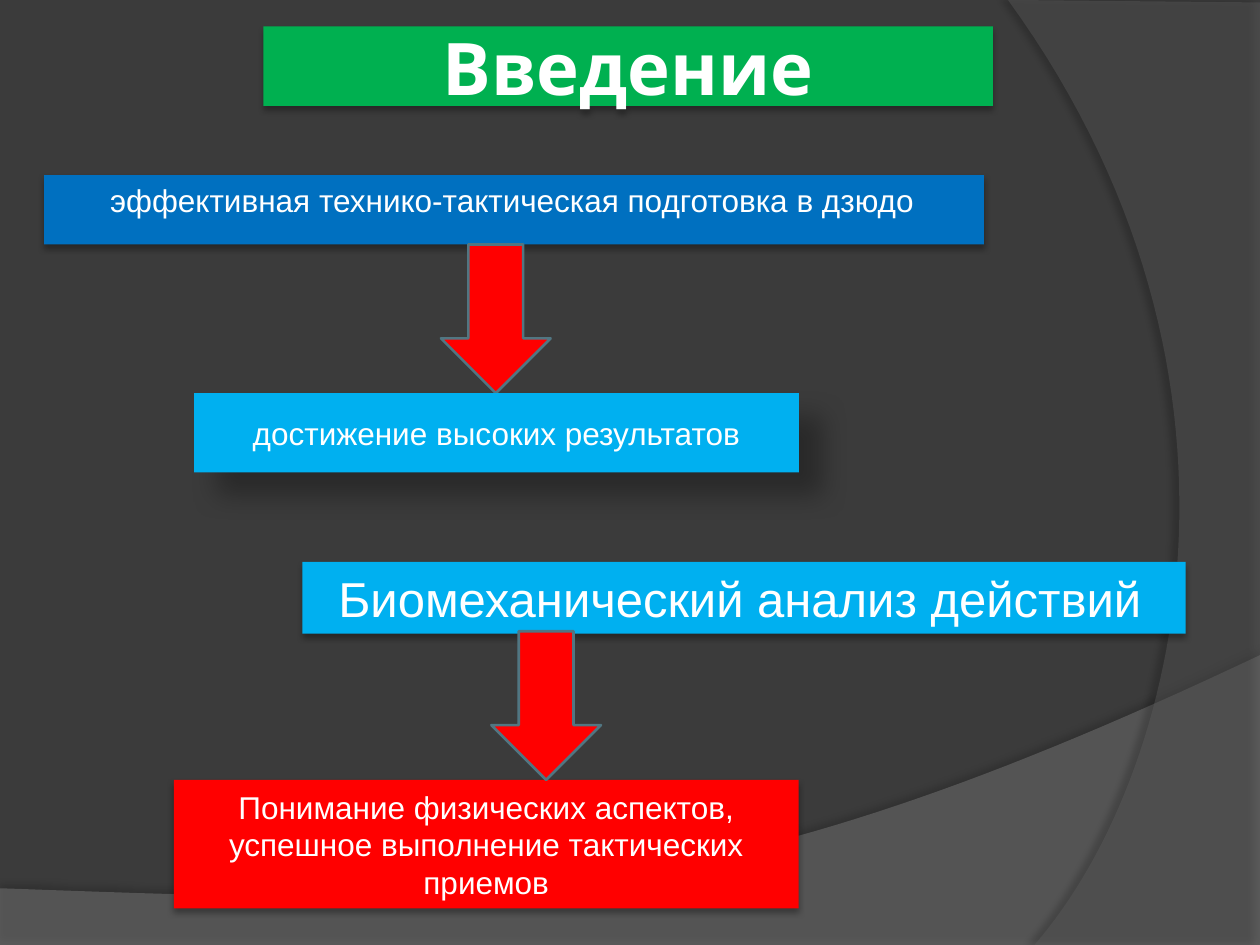
import dataclasses

import lxml.etree
import pptx
import pptx.dml.color
import pptx.enum.shapes
import pptx.enum.text
import pptx.oxml.ns
import pptx.util

Inches = pptx.util.Inches
Pt = pptx.util.Pt
qn = pptx.oxml.ns.qn
SHAPE = pptx.enum.shapes.MSO_SHAPE
ANCHOR = pptx.enum.text.MSO_ANCHOR


@dataclasses.dataclass(frozen=True)
class Theme:
    background: str = "3B3B3B"
    hill: str = "7F7F7F"
    arc: str = "5E5E5E"
    title: str = "00B050"
    cause: str = "0070C0"
    step: str = "00B0F0"
    accent: str = "FF0000"
    outline: str = "517682"
    text: str = "FFFFFF"
    shadow: str = "000000"
    title_font: str = "Karla"
    body_font: str = "Arial"
    title_size: float = 41.4
    large_size: float = 28
    body_size: float = 18


@dataclasses.dataclass(frozen=True)
class Box:
    left: float
    top: float
    width: float
    height: float

    def inner(self, left, top, width, height):
        """Return a box placed relative to this one."""
        return Box(self.left + left, self.top + top, width, height)

    def emu(self):
        return [Inches(v) for v in dataclasses.astuple(self)]


THEME = Theme()
# Shadows: opacity %, blur pt, distance pt, direction in degrees
SOFT = (32, 3.5, 2.2, 90)
DEEP = (30, 15, 18, 45)


def rgb(color):
    return pptx.dml.color.RGBColor.from_string(color)


def set_alpha(color_element, percent):
    alpha = lxml.etree.SubElement(color_element, qn("a:alpha"))
    alpha.set("val", str(percent * 1000))


def style(sp, fill, shadow=None, line=None, opacity=None):
    sp.fill.solid()
    sp.fill.fore_color.rgb = rgb(fill)
    if opacity:
        set_alpha(sp._element.spPr.find(qn("a:solidFill"))[0], opacity)
    if line:
        sp.line.color.rgb = rgb(line)
        sp.line.width = Pt(1.5)
    else:
        sp.line.fill.background()
    sp.shadow.inherit = False
    if shadow:
        alpha, blur, distance, direction = shadow
        effects = sp._element.spPr.find(qn("a:effectLst"))
        outer = lxml.etree.SubElement(effects, qn("a:outerShdw"))
        outer.set("blurRad", str(Pt(blur)))
        outer.set("dist", str(Pt(distance)))
        outer.set("dir", str(direction * 60000))
        outer.set("rotWithShape", "0")
        color = lxml.etree.SubElement(outer, qn("a:srgbClr"))
        color.set("val", THEME.shadow)
        set_alpha(color, alpha)


def write(sp, text, size=THEME.body_size, font=THEME.body_font, bold=False,
          anchor=ANCHOR.MIDDLE, hanging=False):
    tf = sp.text_frame
    tf.word_wrap = True
    tf.auto_size = pptx.enum.text.MSO_AUTO_SIZE.NONE
    tf.vertical_anchor = anchor
    p = tf.paragraphs[0]
    p.alignment = pptx.enum.text.PP_ALIGN.CENTER
    if hanging:
        p.space_before = Pt(size * 0.2)
        pPr = p._p.get_or_add_pPr()
        pPr.set("marL", str(Inches(0.46)))
        pPr.set("indent", str(Inches(-0.42)))
        lxml.etree.SubElement(pPr, qn("a:buNone"))
    r = p.add_run()
    r.text = text
    r.font.size = Pt(size)
    r.font.name = font
    r.font.bold = bold
    r.font.color.rgb = rgb(THEME.text)


def place(sp, box):
    """Move a placeholder into its box and in front of what is drawn."""
    sp.left, sp.top, sp.width, sp.height = box.emu()
    sp._element.getparent().append(sp._element)


def panel(slide, box, fill, text, shadow=SOFT, **fmt):
    sp = slide.shapes.add_shape(SHAPE.RECTANGLE, *box.emu())
    style(sp, fill, shadow)
    write(sp, text, **fmt)


def arrow(slide, box):
    sp = slide.shapes.add_shape(SHAPE.DOWN_ARROW, *box.emu())
    style(sp, THEME.accent, line=THEME.outline)


def bezier(p0, p1, p2, p3, steps=60):
    """Points along a cubic curve, both ends included."""
    def at(t, a, b, c, d):
        u = 1 - t
        return u**3 * a + 3 * u * u * t * b + 3 * u * t * t * c + t**3 * d
    return [tuple(at(i / steps, *axis) for axis in zip(p0, p1, p2, p3))
            for i in range(steps + 1)]


def outline(slide, box, points, **look):
    pts = [(Inches(box.left + x), Inches(box.top + y)) for x, y in points]
    builder = slide.shapes.build_freeform(*pts[0])
    builder.add_line_segments(pts[1:], close=True)
    style(builder.convert_to_shape(), **look)


def backdrop(slide, box):
    slide.background.fill.solid()
    slide.background.fill.fore_color.rgb = rgb(THEME.background)
    w, h = box.width, box.height
    # Hill along the bottom
    crest = bezier((w, 5.2), (5.59, 7.29), (3.91, 7.19), (0, 7.05))
    outline(slide, box, [(0, h), (w, h)] + crest,
            fill=THEME.hill, opacity=45, shadow=(35, 4, 3.5, 270))
    # Arc down the right side
    edge = bezier((8.21, h), (9.35, 6.19), (10.18, 3), (8, 0))
    outline(slide, box, [(w, 0.02), (w, h)] + edge,
            fill=THEME.arc, opacity=40, shadow=(45, 4, 4, 180))


def heading(slide, box):
    sp = slide.shapes.title
    place(sp, box)
    style(sp, THEME.title, SOFT)
    write(sp, "Введение", size=THEME.title_size, font=THEME.title_font, bold=True)
    tf = sp.text_frame
    tf.margin_left = tf.margin_right = Inches(0.05)
    tf.margin_top = tf.margin_bottom = Inches(0.05)


def training_flow(slide, box):
    sp = slide.placeholders[1]
    place(sp, box.inner(0, 0, box.width, 0.55))
    style(sp, THEME.cause, SOFT)
    write(sp, "эффективная технико-тактическая подготовка в дзюдо ",
          anchor=ANCHOR.TOP, hanging=True)
    arrow(slide, box.inner(3.15, 0.55, 0.87, 1.18))
    panel(slide, box.inner(1.19, 1.73, 4.8, 0.63), THEME.step,
          "достижение высоких результатов", shadow=DEEP)


def analysis_flow(slide, box):
    panel(slide, box.inner(1.02, 0, 7.01, 0.57), THEME.step,
          "Биомеханический анализ действий ", size=THEME.large_size,
          anchor=ANCHOR.TOP, hanging=True)
    panel(slide, box.inner(0, 1.73, 4.96, 1.02), THEME.accent,
          "Понимание физических аспектов, успешное выполнение тактических приемов")
    arrow(slide, box.inner(2.52, 0.55, 0.87, 1.18))


def main():
    prs = pptx.Presentation()
    prs.slide_width, prs.slide_height = Inches(10), Inches(7.5)
    slide = prs.slides.add_slide(prs.slide_layouts[1])
    backdrop(slide, Box(0, 0, 10, 7.5))
    heading(slide, Box(2.09, 0.21, 5.79, 0.63))
    training_flow(slide, Box(0.35, 1.39, 7.46, 2.36))
    analysis_flow(slide, Box(1.38, 4.46, 8.03, 2.75))
    prs.save("out.pptx")


if __name__ == "__main__":
    main()
